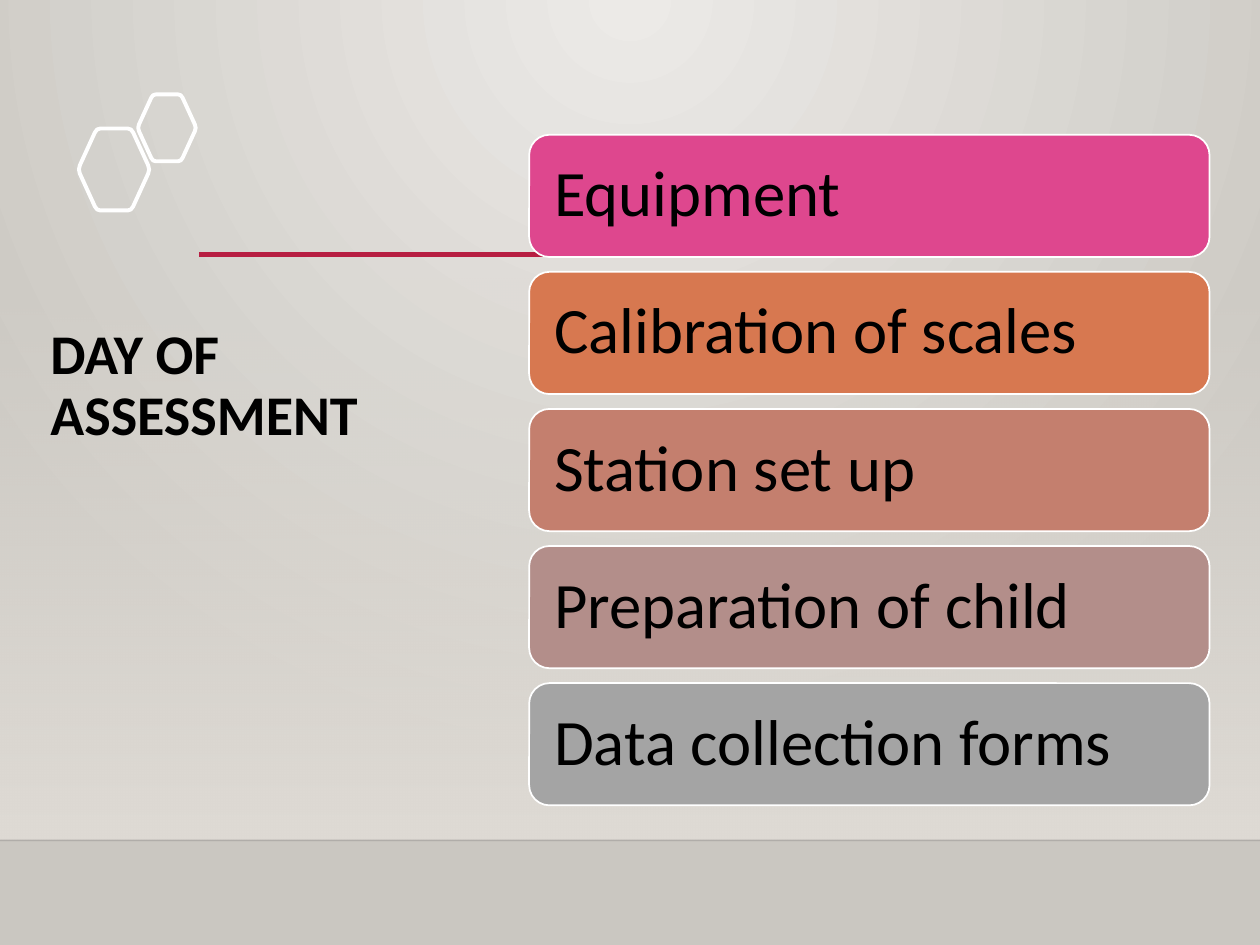
"""Build the Day of Assessment slide with its stack of five preparation steps."""
from typing import NamedTuple

from lxml.etree import SubElement
from pptx import Presentation
from pptx.dml.color import RGBColor
from pptx.enum.shapes import MSO_CONNECTOR as Connector, MSO_SHAPE as Preset
from pptx.enum.text import MSO_ANCHOR as Anchor, MSO_AUTO_SIZE as AutoSize, PP_ALIGN as Align
from pptx.oxml import parse_xml
from pptx.oxml.ns import nsdecls, qn
from pptx.util import Inches, Pt

COLUMNS, ROWS = 100, 75
WIDTH, HEIGHT = Inches(10), Inches(7.5)
HEXAGON = ((0.25, 0), (0.75, 0), (1.02, 0.5), (0.75, 1), (0.25, 1), (-0.02, 0.5))


class Box(NamedTuple):
    left: float
    top: float
    width: float
    height: float


class Step(NamedTuple):
    text: str
    fill: str


class Rule(NamedTuple):
    start: float
    end: float
    row: float
    color: str
    weight: float
    opacity: int


STEPS = (
    Step("Equipment", "DE478E"),
    Step("Calibration of scales", "D77850"),
    Step("Station set up", "C47F6E"),
    Step("Preparation of child", "B38E8A"),
    Step("Data collection forms", "A4A4A4"),
)
RULES = (Rule(0, 100, 66.7, "000001", 1, 20), Rule(15.8, 87.7, 20.2, "B71E42", 2.5, 100))
HEXAGONS = (Box(6.3, 10.2, 5.5, 6.5), Box(11, 7.5, 4.5, 5.3))
TITLE_BOX = Box(3, 25.4, 33.7, 17.9)
PANEL = Box(0, 22, 100, 44.7)
FIRST_CARD = Box(42, 10.7, 54, 9.7)
CARD_PITCH = 10.88


def across(columns: float) -> int:
    """Convert grid columns to a slide length."""
    return round(WIDTH * columns / COLUMNS)


def down(rows: float) -> int:
    """Convert grid rows to a slide length."""
    return round(HEIGHT * rows / ROWS)


def place(box: Box) -> tuple[int, int, int, int]:
    """Convert a grid box to slide lengths."""
    return across(box.left), down(box.top), across(box.width), down(box.height)


def paint(color_format, color: str) -> None:
    """Apply a hex colour to a fill or line colour."""
    color_format.rgb = RGBColor.from_string(color)


def gradient(stops: tuple, direction: str):
    """Make a gradient fill from (position, colour, opacity) stops."""
    marks = "".join(
        f'<a:gs pos="{position * 1000}"><a:srgbClr val="{color}">'
        f'<a:alpha val="{opacity * 1000}"/></a:srgbClr></a:gs>'
        for position, color, opacity in stops
    )
    return parse_xml(f'<a:gradFill {nsdecls("a")} rotWithShape="1"><a:gsLst>{marks}</a:gsLst>{direction}</a:gradFill>')


def replace_fill(parent, fill) -> None:
    """Swap a solid fill for a gradient."""
    parent.replace(parent.find(qn("a:solidFill")), fill)


def write(frame, text: str, *, size: float, inset: tuple, anchor, bold: bool = False) -> None:
    """Fill a text frame with one formatted left-aligned paragraph."""
    frame.word_wrap = True
    frame.auto_size = AutoSize.NONE
    frame.vertical_anchor = anchor
    frame.margin_left = frame.margin_right = Inches(inset[0])
    frame.margin_top = frame.margin_bottom = Inches(inset[1])
    paragraph = frame.paragraphs[0]
    paragraph.alignment = Align.LEFT
    paragraph.line_spacing = 0.9
    run = paragraph.add_run()
    run.text = text
    run.font.name, run.font.size, run.font.bold = "Calibri", Pt(size), bold
    paint(run.font.color, "000000")


def draw_background(slide) -> None:
    """Paint the radial background and the panel that fades in over it."""
    slide.background.fill.solid()
    paint(slide.background.fill.fore_color, "CAC7C1")
    properties = next(slide.element.iter(qn("p:bgPr")))
    glow = '<a:path path="circle"><a:fillToRect l="43000" t="0" r="43000" b="100000"/></a:path>'
    replace_fill(properties, gradient(((0, "ECEAE7", 100), (100, "CAC7C1", 100)), glow))
    panel = slide.shapes.add_shape(Preset.RECTANGLE, *place(PANEL))
    panel.shadow.inherit = False
    panel.line.fill.background()
    panel.fill.solid()
    fade = gradient(((0, "DFDBD5", 0), (100, "DFDBD5", 100)), '<a:lin ang="5400000" scaled="0"/>')
    replace_fill(panel.element.spPr, fade)


def draw_rule(slide, rule: Rule) -> None:
    """Draw one horizontal line."""
    line = slide.shapes.add_connector(
        Connector.STRAIGHT, across(rule.start), down(rule.row), across(rule.end), down(rule.row)
    )
    line.line.width = Pt(rule.weight)
    paint(line.line.color, rule.color)
    color = next(line.element.spPr.iter(qn("a:srgbClr")))
    SubElement(color, qn("a:alpha"), val=str(rule.opacity * 1000))
    SubElement(line.element.spPr, qn("a:effectLst"))


def rounded(vertices: tuple, cut: float = 0.1) -> list[tuple[float, float]]:
    """Replace each vertex by three points on a small curve."""
    points = []
    for index, corner in enumerate(vertices):
        before, after = vertices[index - 1], vertices[(index + 1) % len(vertices)]
        entry, leave = (
            tuple(c + (n - c) * cut for c, n in zip(corner, near)) for near in (before, after)
        )
        middle = tuple((e + 2 * c + l) / 4 for e, c, l in zip(entry, corner, leave))
        points += [entry, middle, leave]
    return points


def draw_hexagon(slide, box: Box) -> None:
    """Outline a soft-cornered hexagon in a grid box."""
    left, top, width, height = place(box)
    points = [(round(left + x * width), round(top + y * height)) for x, y in rounded(HEXAGON)]
    builder = slide.shapes.build_freeform(*points[0])
    builder.add_line_segments(points[1:], close=True)
    hexagon = builder.convert_to_shape()
    hexagon.shadow.inherit = False
    hexagon.fill.background()
    paint(hexagon.line.color, "FFFFFF")
    hexagon.line.width = Pt(2.25)


def draw_title(slide) -> None:
    """Place the title in front of the panel."""
    title = slide.shapes.title
    title.element.getparent().append(title.element)
    title.left, title.top, title.width, title.height = place(TITLE_BOX)
    write(title.text_frame, "DAY OF ASSESSMENT", size=32, inset=(0.1, 0.05), anchor=Anchor.TOP, bold=True)


def draw_step(slide, step: Step, index: int) -> None:
    """Draw one card of the stack."""
    box = FIRST_CARD._replace(top=FIRST_CARD.top + index * CARD_PITCH)
    card = slide.shapes.add_shape(Preset.ROUNDED_RECTANGLE, *place(box))
    card.shadow.inherit = False
    card.fill.solid()
    paint(card.fill.fore_color, step.fill)
    paint(card.line.color, "FFFFFF")
    card.line.width = Pt(1)
    write(card.text_frame, step.text, size=37, inset=(0.15, 0.15), anchor=Anchor.MIDDLE)


def main() -> None:
    """Build and save the presentation."""
    presentation = Presentation()
    presentation.slide_width, presentation.slide_height = WIDTH, HEIGHT
    slide = presentation.slides.add_slide(presentation.slide_layouts.get_by_name("Title Only"))
    draw_background(slide)
    for rule in RULES:
        draw_rule(slide, rule)
    draw_title(slide)
    for box in HEXAGONS:
        draw_hexagon(slide, box)
    for index, step in enumerate(STEPS):
        draw_step(slide, step, index)
    presentation.save("out.pptx")


if __name__ == "__main__":
    main()
